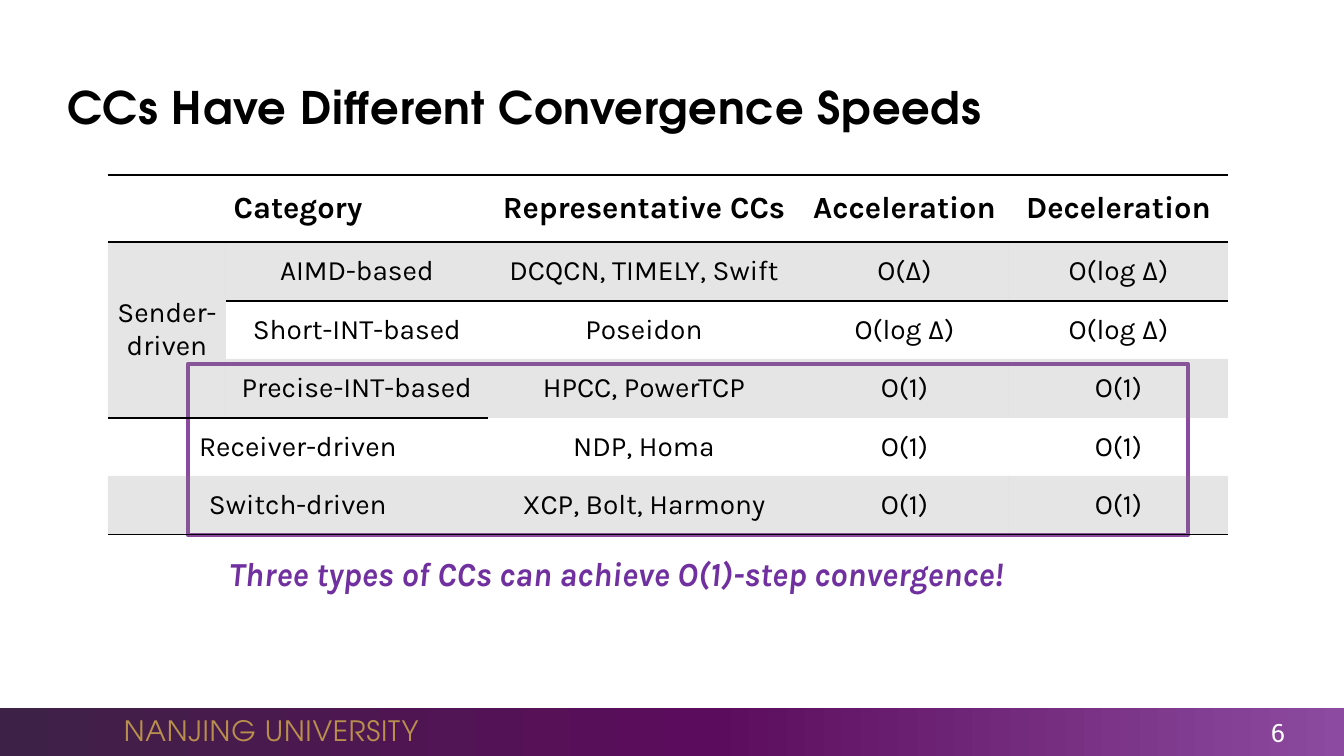
from copy import deepcopy
from lxml import etree
from pptx import Presentation, util as u
from pptx.dml.color import RGBColor
from pptx.enum import shapes, text
from pptx.oxml.ns import qn

PX = 9071.43
MID = text.MSO_ANCHOR.MIDDLE
LEFT, MIDDLE, RIGHT = text.PP_ALIGN.LEFT, text.PP_ALIGN.CENTER, text.PP_ALIGN.RIGHT
BLACK, HEAD, BODY = "000000", "TeX Gyre Adventor", "Karla"


def px(*nums):
    return [u.Emu(round(n * PX)) for n in nums]


def write(frame, words, color, align=LEFT, gap=0, **form):
    frame.vertical_anchor = form.pop("anchor", MID)
    para = frame.paragraphs[0]
    para.alignment = align
    run = para.add_run()
    run.text = words
    run.font.color.rgb = RGBColor.from_string(color)
    form["size"] = u.Pt(form["size"])
    for key, val in form.items():
        setattr(run.font, key, val)
    if gap:
        run._r.get_or_add_rPr().set("spc", str(gap))


deck = Presentation()
deck.slide_width, deck.slide_height = px(1344, 756)
slide = deck.slides.add_slide(deck.slide_layouts[5])
items = slide.shapes

bar = items.add_shape(shapes.MSO_SHAPE.RECTANGLE, *px(0, 708, 1344, 48))
bar.shadow.inherit = False
bar.line.fill.background()
bar.fill.gradient()
bar.fill.gradient_angle = 0
stops = bar._element.spPr.find(".//" + qn("a:gsLst"))
stops.append(deepcopy(stops[0]))
for stop, (pos, color) in zip(bar.fill.gradient_stops,
                              [(0, "3E2146"), (0.53, "5C0C5C"), (1, "8C4BA0")]):
    stop.position = pos
    stop.color.rgb = RGBColor.from_string(color)

school = items.add_textbox(*px(114, 708, 320, 44)).text_frame
school.word_wrap = False
write(school, "NANJING UNIVERSITY", "B88F4C", size=20, name=HEAD, gap=50)

page = items.add_textbox(*px(1188, 715, 107, 35)).text_frame
page.word_wrap = True
write(page, "6", "FFFFFF", RIGHT, size=18, name="Roboto Slab")

title = items.title
title.left, title.top, title.width, title.height = px(57, 68, 1210, 78)
title.text_frame.auto_size = text.MSO_AUTO_SIZE.NONE
write(title.text_frame, "CCs Have Different Convergence Speeds", BLACK,
      size=32, name=HEAD, bold=True, gap=50)

box = items.add_shape(shapes.MSO_SHAPE.RECTANGLE, *px(188, 364, 1000, 171))
box.shadow.inherit = False
box.fill.background()
box.line.color.rgb = RGBColor.from_string("8B4A9F")
box.line.width = u.Pt(3)

note = items.add_textbox(*px(219, 548, 950, 50)).text_frame
note.word_wrap = True
write(note, "Three types of CCs can achieve O(1)-step convergence!", "7030A0",
      size=24, name=BODY, bold=True, italic=True, anchor=text.MSO_ANCHOR.TOP)

highs = [67, 59, 58, 59, 58, 59]
parts = [
    ([118, 262], [["Category", ""], ["Sender-driven", "AIMD-based"],
                  ["", "Short-INT-based"], ["", "Precise-INT-based"],
                  ["Receiver-driven", ""], ["Switch-driven", ""]],
     [(0, 0, 0, 1), (1, 0, 3, 0), (4, 0, 4, 1), (5, 0, 5, 1)]),
    ([312], [["Representative CCs"], ["DCQCN, TIMELY, Swift"], ["Poseidon"],
             ["HPCC, PowerTCP"], ["NDP, Homa"], ["XCP, Bolt, Harmony"]], []),
    ([209, 219], [["Acceleration", "Deceleration"], ["O(Δ)", "O(log Δ)"],
                  ["O(log Δ)", "O(log Δ)"]] + [["O(1)", "O(1)"]] * 3, []),
]
edges = {0: ["a:lnT", "a:lnB"], 1: ["a:lnT"], 5: ["a:lnB"]}
left = 108
for wides, rows, spans in parts:
    frame = items.add_table(len(rows), len(wides),
                            *px(left, 175, sum(wides), sum(highs)))
    left += sum(wides)
    grid = frame.table
    grid.first_row = grid.horz_banding = False
    style = frame._element.find(".//" + qn("a:tableStyleId"))
    style.text = "{2D5ABB26-0587-4C30-8999-92F81FD0307C}"
    for col, wide in zip(grid.columns, px(*wides)):
        col.width = wide
    for row, high in zip(grid.rows, px(*highs)):
        row.height = high
    for r1, c1, r2, c2 in spans:
        grid.cell(r1, c1).merge(grid.cell(r2, c2))
    for r, row in enumerate(rows):
        for c, words in enumerate(row):
            cell = grid.cell(r, c)
            prop = cell._tc.get_or_add_tcPr()
            for edge in edges.get(r, []):
                line = etree.SubElement(prop, qn(edge), w="12700")
                paint = etree.SubElement(line, qn("a:solidFill"))
                etree.SubElement(paint, qn("a:srgbClr"), val=BLACK)
            if r % 2:
                cell.fill.solid()
                cell.fill.fore_color.rgb = RGBColor.from_string("808080")
                tint = prop.find(qn("a:solidFill"))[0]
                etree.SubElement(tint, qn("a:alpha"), val="20000")
            else:
                cell.fill.background()
            if r:
                for side in ("left", "right", "top", "bottom"):
                    setattr(cell, "margin_" + side, u.Inches(0.03))
            cell.vertical_anchor = MID
            if words:
                write(cell.text_frame, words, BLACK, MIDDLE, name=BODY,
                      size=20 if r else 22, bold=not r)

deck.save("out.pptx")
